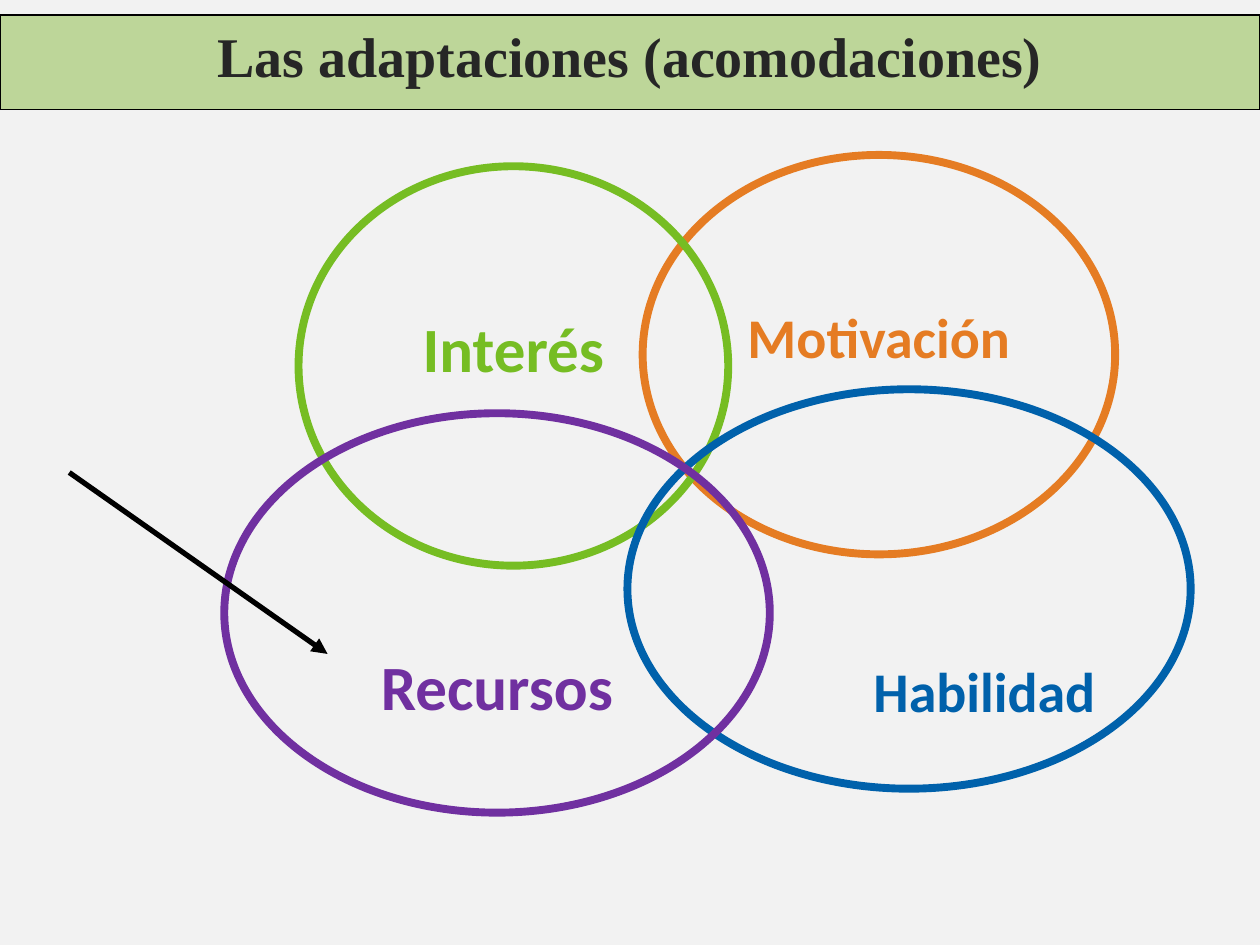
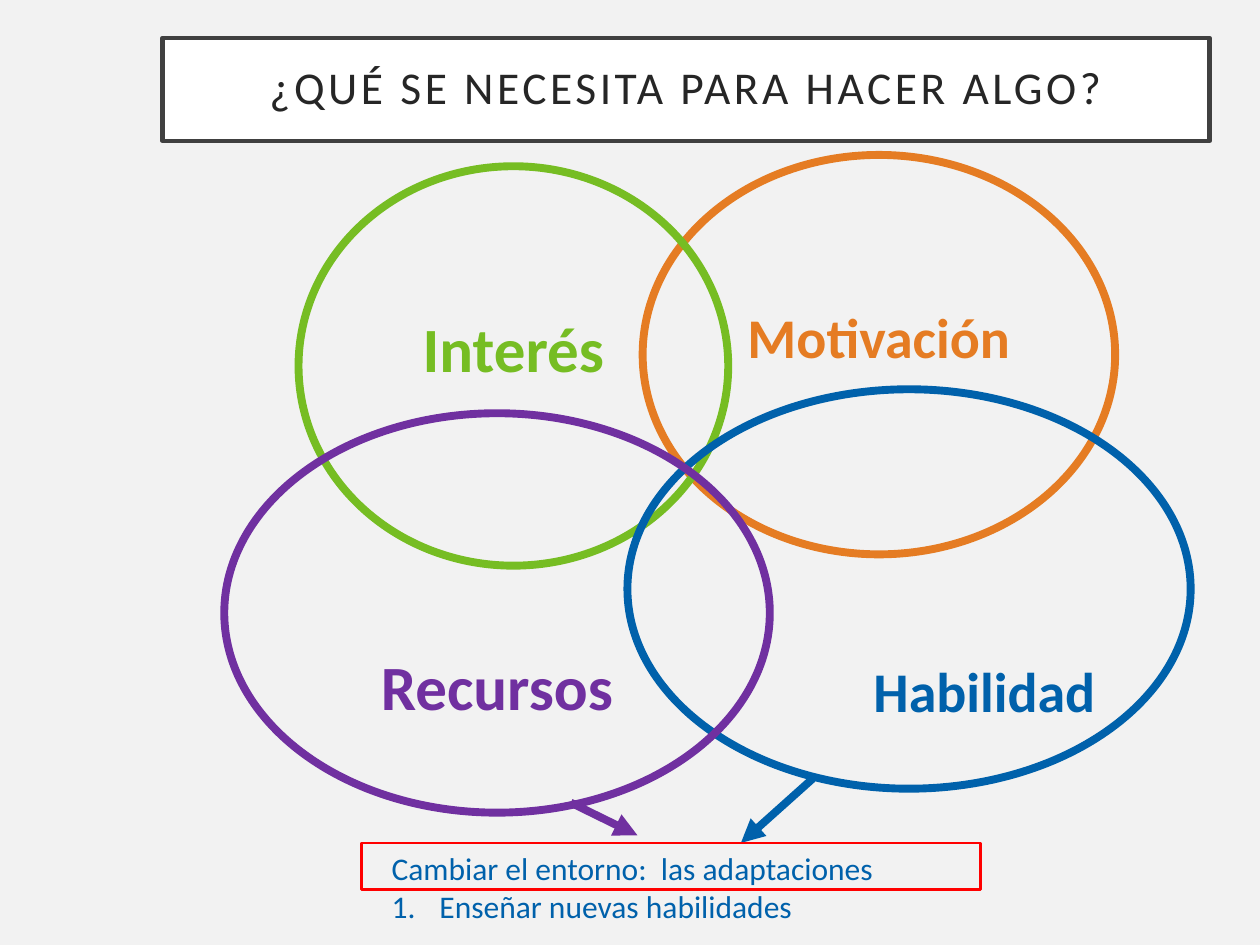
from collections import namedtuple

from lxml import etree
from pptx import Presentation
from pptx.dml.color import RGBColor
from pptx.enum.shapes import MSO_CONNECTOR, MSO_SHAPE
from pptx.enum.text import MSO_ANCHOR, PP_ALIGN
from pptx.oxml.ns import qn
from pptx.util import Inches, Pt

OVAL, RECTANGLE = MSO_SHAPE.OVAL, MSO_SHAPE.RECTANGLE
STRAIGHT = MSO_CONNECTOR.STRAIGHT
LEFT, CENTER, RIGHT = PP_ALIGN.LEFT, PP_ALIGN.CENTER, PP_ALIGN.RIGHT
TOP, MIDDLE = MSO_ANCHOR.TOP, MSO_ANCHOR.MIDDLE

BACKGROUND, INK, BLACK, WHITE = "F2F2F2", "262626", "000000", "FFFFFF"
GREEN, ORANGE, BLUE, PURPLE = "76BD23", "E57C23", "0061AB", "7030A0"
BAND, FRAME, RED = "BDD699", "404040", "FF0000"
BODY_FONT, BAND_FONT = "Calibri", "Times New Roman"

Box = namedtuple("Box", "left top width height")
Circle = namedtuple("Circle", "label color size area align above below")

SLIDE = Box(0, 0, Inches(10), Inches(7.5))
CIRCLE_HEIGHT = 60.73
CIRCLES = [
    Circle("Motivación", ORANGE, 32, (43.29, 0, 48.89, CIRCLE_HEIGHT), CENTER, 0, 0.3),
    Circle("Interés", GREEN, 36, (7.69, 1.72, 44.46, CIRCLE_HEIGHT), CENTER, 0, 0.3),
    Circle("Habilidad", BLUE, 32, (41.72, 35.63, 58.28, CIRCLE_HEIGHT), RIGHT, 1.6, 0),
    Circle("Recursos", PURPLE, 36, (0, 39.27, 56.45, CIRCLE_HEIGHT), CENTER, 1.15, 0),
]


def rgb(color):
    return RGBColor.from_string(color)


def point(box, x, y):
    return round(box.left + box.width * x / 100), round(box.top + box.height * y / 100)


def part(box, x, y, width, height):
    return Box(*point(box, x, y), round(box.width * width / 100), round(box.height * height / 100))


def outline(slide, kind, box, line_color, line_width, fill=None):
    shape = slide.shapes.add_shape(kind, *box)
    shape.shadow.inherit = False
    if fill:
        shape.fill.solid()
        shape.fill.fore_color.rgb = rgb(fill)
    else:
        shape.fill.background()
    shape.line.color.rgb = rgb(line_color)
    shape.line.width = Pt(line_width)
    return shape


def write(paragraph, text, size, color, font=BODY_FONT, bold=False, align=LEFT):
    paragraph.text = text
    paragraph.alignment = align
    paragraph.font.name = font
    paragraph.font.size = Pt(size)
    paragraph.font.bold = bold
    paragraph.font.color.rgb = rgb(color)


def arrow(slide, box, start, end, color, width):
    connector = slide.shapes.add_connector(STRAIGHT, *point(box, *start), *point(box, *end))
    connector.line.color.rgb = rgb(color)
    connector.line.width = Pt(width)
    etree.SubElement(connector.line._get_or_add_ln(), qn("a:tailEnd"), type="triangle")
    etree.SubElement(connector._element.spPr, qn("a:effectLst"))


def circles_diagram(slide, box):
    for circle in CIRCLES:
        oval = outline(slide, OVAL, part(box, *circle.area), circle.color, 4.5)
        frame = oval.text_frame
        frame.vertical_anchor = MIDDLE
        frame.margin_top = Inches(0.05 + circle.above)
        frame.margin_bottom = Inches(0.05 + circle.below)
        write(frame.paragraphs[0], circle.label, circle.size, circle.color,
              bold=True, align=circle.align)


def band_title(slide, box, text):
    band = outline(slide, RECTANGLE, box, BLACK, 0.75, BAND)
    band.text_frame.vertical_anchor = TOP
    write(band.text_frame.paragraphs[0], text, 32, INK, BAND_FONT, True, CENTER)


def framed_title(slide, box, text):
    frame = outline(slide, RECTANGLE, box, FRAME, 2.5, WHITE).text_frame
    frame.vertical_anchor = MIDDLE
    frame.margin_left = frame.margin_right = Inches(0.2)
    frame.margin_top = frame.margin_bottom = Inches(0.2)
    title = frame.paragraphs[0]
    write(title, text, 26, INK, align=CENTER)
    title.line_spacing = 0.9
    title.runs[0].font._element.set("spc", "200")


def strategies(slide, box, highlighted, numbered):
    frame = slide.shapes.add_textbox(*part(box, 2.85, 0, 101.83, 191.89)).text_frame
    frame.word_wrap = True
    write(frame.paragraphs[0], highlighted, 18, BLUE)
    step = frame.add_paragraph()
    properties = step._p.get_or_add_pPr()
    properties.set("marL", str(Inches(0.38)))
    properties.set("indent", str(-Inches(0.38)))
    etree.SubElement(properties, qn("a:buFont"), typeface="+mj-lt")
    etree.SubElement(properties, qn("a:buAutoNum"), type="arabicPeriod")
    write(step, numbered, 18, BLUE)
    outline(slide, RECTANGLE, box, RED, 1.5)


def new_slide(deck):
    slide = deck.slides.add_slide(deck.slide_layouts[6])
    slide.background.fill.solid()
    slide.background.fill.fore_color.rgb = rgb(BACKGROUND)
    return slide


def adaptations_slide(deck, diagram):
    slide = new_slide(deck)
    circles_diagram(slide, diagram)
    band_title(slide, part(SLIDE, 0, 1.6, 100, 10), "Las adaptaciones (acomodaciones)")
    arrow(slide, diagram, (-16.04, 48.28), (10.69, 75.86), BLACK, 3)


def needs_slide(deck, diagram):
    slide = new_slide(deck)
    framed_title(slide, part(SLIDE, 12.9, 4, 83.1, 10.93), "¿QUÉ SE NECESITA PARA HACER ALGO?")
    circles_diagram(slide, diagram)
    arrow(slide, diagram, (60.89, 94.83), (53.46, 104.6), BLUE, 4.5)
    arrow(slide, diagram, (35.85, 98.47), (42.76, 103.45), PURPLE, 4.5)
    strategies(slide, part(SLIDE, 28.7, 89.2, 49.1, 4.93),
               "Cambiar el entorno:  las adaptaciones", "Enseñar nuevas habilidades")


def main():
    deck = Presentation()
    deck.slide_width, deck.slide_height = SLIDE.width, SLIDE.height
    diagram = part(SLIDE, 17.8, 16.4, 76.7, 69.6)
    adaptations_slide(deck, diagram)
    needs_slide(deck, diagram)
    deck.save("out.pptx")


if __name__ == "__main__":
    main()
